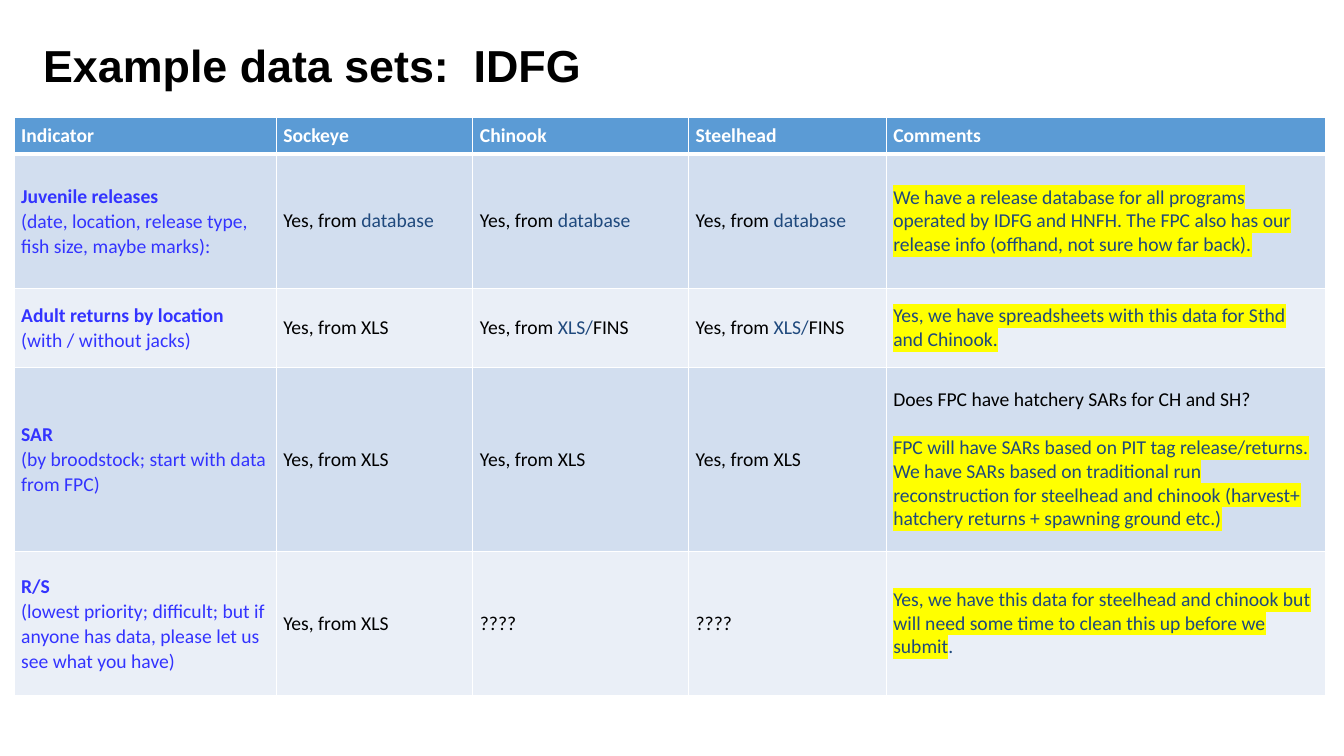
import pptx
import pptx.util
import pptx.dml.color
import pptx.enum.text
import pptx.oxml.ns
import lxml.etree

Inches = pptx.util.Inches
Pt = pptx.util.Pt
MIDDLE = pptx.enum.text.MSO_ANCHOR.MIDDLE

BLACK, WHITE, NAVY, BLUE, YELLOW = "000000", "FFFFFF", "1F497D", "3333FF", "FFFF00"
HEAD, BANDS = "5B9BD5", ("D2DEEF", "EAEFF7")


def color(text):
    return pptx.dml.color.RGBColor.from_string(text)


class Deck:
    def __init__(self):
        self.prs = pptx.Presentation()
        self.prs.slide_width = Inches(13.33)
        self.prs.slide_height = Inches(7.5)
        self.slide = self.prs.slides.add_slide(self.prs.slide_layouts[6])

    def style(self, run, size, face, ink, bold=False, mark=None):
        font = run.font
        font.size, font.name, font.bold = Pt(size), face, bold
        font.color.rgb = color(ink)
        if mark:
            fill = font._element.find(pptx.oxml.ns.qn("a:solidFill"))
            light = lxml.etree.Element(pptx.oxml.ns.qn("a:highlight"))
            lxml.etree.SubElement(light, pptx.oxml.ns.qn("a:srgbClr"), val=mark)
            fill.addnext(light)

    def title(self, text, left, top, width, height):
        box = self.slide.shapes.add_textbox(
            Inches(left), Inches(top), Inches(width), Inches(height))
        frame = box.text_frame
        frame.text = text
        frame.word_wrap = True
        frame.auto_size = pptx.enum.text.MSO_AUTO_SIZE.SHAPE_TO_FIT_TEXT
        frame.vertical_anchor = MIDDLE
        self.style(frame.paragraphs[0].runs[0], 32, "Arial", BLACK, True)

    def border(self, cell, top, bottom):
        props = cell._tc.get_or_add_tcPr()
        sides = (("L", 1), ("R", 1), ("T", top), ("B", bottom))
        for spot, (side, width) in enumerate(sides):
            line = lxml.etree.Element(pptx.oxml.ns.qn("a:ln" + side), w=str(Pt(width)))
            fill = lxml.etree.SubElement(line, pptx.oxml.ns.qn("a:solidFill"))
            lxml.etree.SubElement(fill, pptx.oxml.ns.qn("a:srgbClr"), val=WHITE)
            props.insert(spot, line)

    def cell(self, cell, paras, fill, spacing=None, gap=0):
        cell.fill.solid()
        cell.fill.fore_color.rgb = color(fill)
        cell.vertical_anchor = MIDDLE
        cell.margin_left = cell.margin_right = Inches(0.07)
        cell.margin_top = cell.margin_bottom = 0
        frame = cell.text_frame
        for spot, parts in enumerate(paras):
            para = frame.add_paragraph() if spot else frame.paragraphs[0]
            if spacing:
                para.line_spacing = spacing
            if spot and gap:
                para.space_before = Pt(gap)
            for text, *look in parts:
                run = para.add_run()
                run.text = text
                self.style(run, 14, "Calibri", *look)

    def table(self, heads, rows, left, top, widths, heights):
        table = self.slide.shapes.add_table(
            len(heights), len(widths), Inches(left), Inches(top),
            Inches(sum(widths)), Inches(sum(heights))).table
        for col, width in zip(table.columns, widths):
            col.width = Inches(width)
        for row, height in zip(table.rows, heights):
            row.height = Inches(height)
        for x, head in enumerate(heads):
            self.cell(table.cell(0, x), [[(head, WHITE, True)]], HEAD)
            self.border(table.cell(0, x), 1, 3)
        for y, (name, hint, *fish, notes) in enumerate(rows, 1):
            band = BANDS[(y - 1) % 2]
            label = [[(name, BLUE, True)], [(hint, BLUE)]]
            self.cell(table.cell(y, 0), label, band, spacing=1.05)
            for x, parts in enumerate(fish, 1):
                self.cell(table.cell(y, x), [parts], band)
            self.cell(table.cell(y, len(fish) + 1), notes, band, gap=17)
            for x in range(len(widths)):
                self.border(table.cell(y, x), 3 if y == 1 else 1, 1)


def note(text):
    return (text, NAVY, False, YELLOW)


# Answers that recur in the fish columns
base = [("Yes, from ", BLACK), ("database", NAVY)]
sheet = [("Yes, from XLS", BLACK)]
fins = [("Yes, from ", BLACK), ("XLS/", NAVY), ("FINS", BLACK)]
open_ = [("????", BLACK)]

# Indicator, hint, three fish columns, comment paragraphs
rows = [
    ("Juvenile releases", "(date, location, release type, fish size, maybe marks):",
     base, base, base,
     [[note("We have a release database for all programs operated by IDFG and HNFH. "
            "The FPC also has our release info (offhand, not sure how far back).")]]),
    ("Adult returns by location", "(with / without jacks)",
     sheet, fins, fins,
     [[note("Yes, we have spreadsheets with this data for Sthd and Chinook.")]]),
    ("SAR", "(by broodstock; start with data from FPC)",
     sheet, sheet, sheet,
     [[("Does FPC have hatchery SARs for CH and SH?", BLACK)],
      [note("FPC will have SARs based on PIT tag release/returns. We have SARs based on "
            "traditional run reconstruction for steelhead and chinook (harvest+ "
            "hatchery returns + spawning ground etc.)")]]),
    ("R/S", "(lowest priority; difficult; but if anyone has data, "
     "please let us see what you have)",
     sheet, open_, open_,
     [[note("Yes, we have this data for steelhead and chinook but will need some time "
            "to clean this up before we submit"), (".", NAVY)]]),
]

deck = Deck()
deck.title("Example data sets:  IDFG", 0.33, 0.32, 12.47, 0.64)
deck.table(("Indicator", "Sockeye", "Chinook", "Steelhead", "Comments"), rows,
           0.14, 1.16, (2.6, 1.95, 2.14, 1.96, 4.36), (0.37, 1.33, 0.79, 1.82, 1.43))
deck.prs.save("out.pptx")
